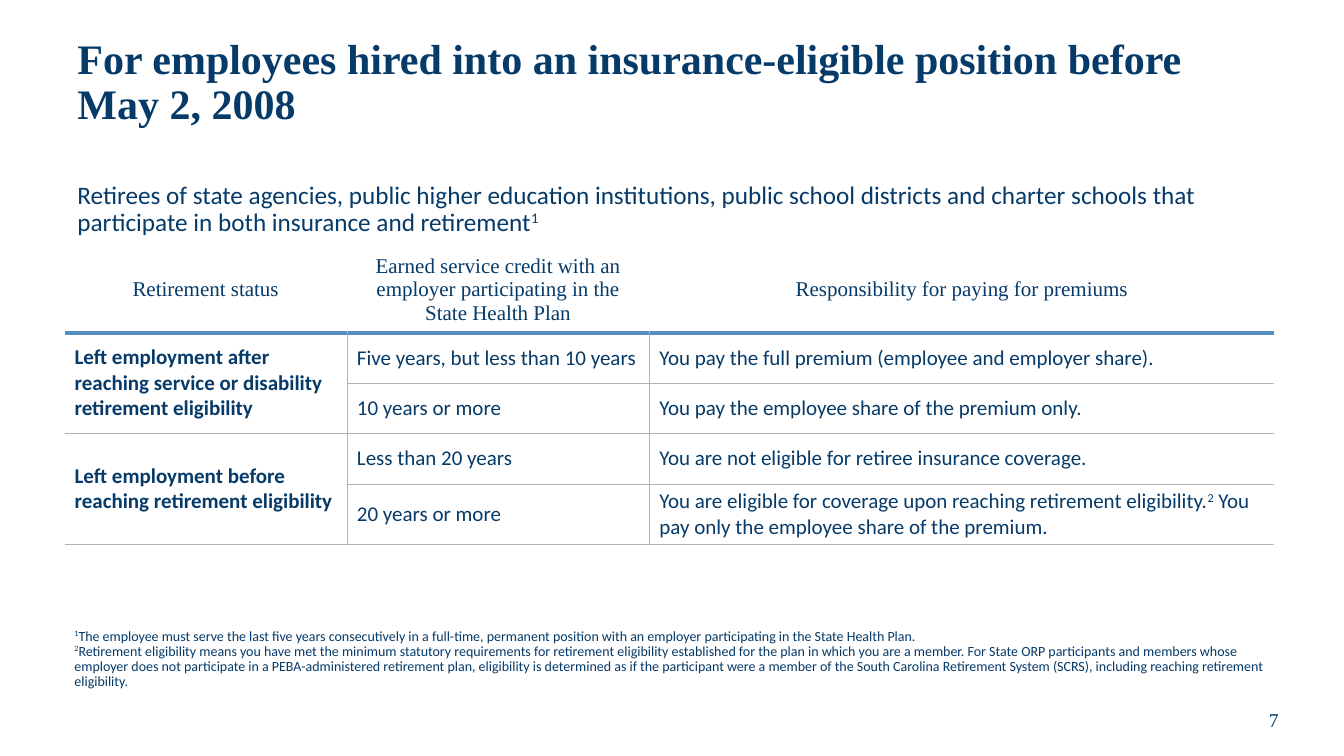
import copy
from pptx import Presentation, util as u
from pptx.dml.color import RGBColor
from pptx.enum import text
from pptx.oxml import parse_xml
from pptx.oxml.ns import nsdecls

NAVY, BLUE, GREY = "063A68", "568EC1", "B2B2B2"
SERIF, SANS = "Times New Roman", "Calibri"
MIDDLE, CENTER = text.MSO_ANCHOR.MIDDLE, text.PP_ALIGN.CENTER

HEADER = [
    "Retirement status",
    "Earned service credit with an\nemployer participating in the\nState Health Plan",
    "Responsibility for paying for premiums",
]
ROWS = [
    ["Left employment after reaching service or disability retirement eligibility",
     "Five years, but less than 10 years",
     "You pay the full premium (employee and employer share)."],
    ["", "10 years or more", "You pay the employee share of the premium only."],
    ["Left employment before reaching retirement eligibility",
     "Less than 20 years",
     "You are not eligible for retiree insurance coverage."],
    ["", "20 years or more",
     "You are eligible for coverage upon reaching retirement eligibility.^2^"
     " You pay only the employee share of the premium."],
]
FOOTNOTES = [
    "^1^The employee must serve the last five years consecutively in a full-time, "
    "permanent position with an employer participating in the State Health Plan.",
    "^2^Retirement eligibility means you have met the minimum statutory requirements "
    "for retirement eligibility established for the plan in which you are a member. "
    "For State ORP participants and members whose employer does not participate in a "
    "PEBA-administered retirement plan, eligibility is determined as if the participant "
    "were a member of the South Carolina Retirement System (SCRS), including reaching "
    "retirement eligibility.",
]


def px(n):
    """Turn px, 100 to the inch, into EMU."""
    return u.Emu(n * 9144)


def rgb(color):
    return RGBColor.from_string(color)


def write(p, words, size=15, font=SANS, color=NAVY, bold=False, align=None, spacing=None):
    """Fill a paragraph; ^marks^ enclose superscripts and newlines break lines."""
    p.alignment, p.line_spacing = align, spacing
    for i, part in enumerate(words.split("^")):
        for j, line in enumerate(part.split("\n")):
            if j:
                p.add_line_break()
                p._p[-1].append(copy.deepcopy(r._r.rPr))
            if not line:
                continue
            r = p.add_run()
            r.text = line
            r.font.size, r.font.name, r.font.bold = u.Pt(size), font, bold
            r.font.color.rgb = rgb(color)
            if i % 2:
                r._r.rPr.set("baseline", "30000")


def set_borders(cell, **sides):
    """Draw the sides given as (colour, points) and clear the others."""
    tc_pr = cell._tc.get_or_add_tcPr()
    for i, side in enumerate("LRTB"):
        color, width = sides.get(side) or (None, 0)
        fill = f'<a:solidFill><a:srgbClr val="{color}"/></a:solidFill>' if color else "<a:noFill/>"
        tc_pr.insert(i, parse_xml(
            f'<a:ln{side} {nsdecls("a")} w="{u.Pt(width)}">{fill}</a:ln{side}>'))


class Deck:
    def __init__(self, width, height):
        self.prs = Presentation()
        self.prs.slide_width, self.prs.slide_height = px(width), px(height)
        self.s = self.prs.slides.add_slide(self.prs.slide_layouts[6])

    def text(self, x, y, w, h, *paragraphs, anchor=text.MSO_ANCHOR.TOP, **fmt):
        tf = self.s.shapes.add_textbox(px(x), px(y), px(w), px(h)).text_frame
        tf.word_wrap, tf.vertical_anchor = True, anchor
        for i, words in enumerate(paragraphs):
            write(tf.add_paragraph() if i else tf.paragraphs[0], words, **fmt)

    def table(self, x, y, widths, row_height, header, rows, group):
        """Add a table whose first column merges every `group` body rows."""
        count = len(rows) + 1
        tbl = self.s.shapes.add_table(count, len(widths), px(x), px(y), px(sum(widths)),
                                      px(row_height * count)).table
        tbl.first_row = tbl.horz_banding = False
        for col, width in zip(tbl.columns, widths):
            col.width = px(width)
        for top in range(1, count, group):
            tbl.cell(top, 0).merge(tbl.cell(top + group - 1, 0))
        rule, hairline = (BLUE, 3), (GREY, 0.5)
        last = len(widths) - 1
        for i, row in enumerate([header] + rows):
            for j, words in enumerate(row):
                cell = tbl.cell(i, j)
                cell.vertical_anchor = MIDDLE
                p = cell.text_frame.paragraphs[0]
                if i == 0:
                    set_borders(cell, B=rule)
                    write(p, words, font=SERIF, align=CENTER)
                else:
                    set_borders(cell, L=hairline if j else None, R=hairline if j < last else None,
                                T=rule if i == 1 else hairline, B=hairline)
                    write(p, words, bold=j == 0)
                cell.fill.background()


def main():
    d = Deck(1333, 750)
    d.text(67, 25, 1200, 115,
           "For employees hired into an insurance-eligible position before May 2, 2008",
           anchor=MIDDLE, size=30, font=SERIF, bold=True, spacing=0.9)
    d.text(67, 176, 1200, 65,
           "Retirees of state agencies, public higher education institutions, public school "
           "districts and charter schools that participate in both insurance and retirement^1^",
           size=18, spacing=0.9)
    d.table(64, 245, [280, 300, 620], 50, HEADER, ROWS, group=2)
    d.text(64, 619, 1200, 71, *FOOTNOTES, size=10, spacing=0.9)
    d.text(1205, 689, 117, 50, "7", anchor=MIDDLE, size=14, font=SERIF, align=CENTER)
    d.prs.save("out.pptx")


if __name__ == "__main__":
    main()
